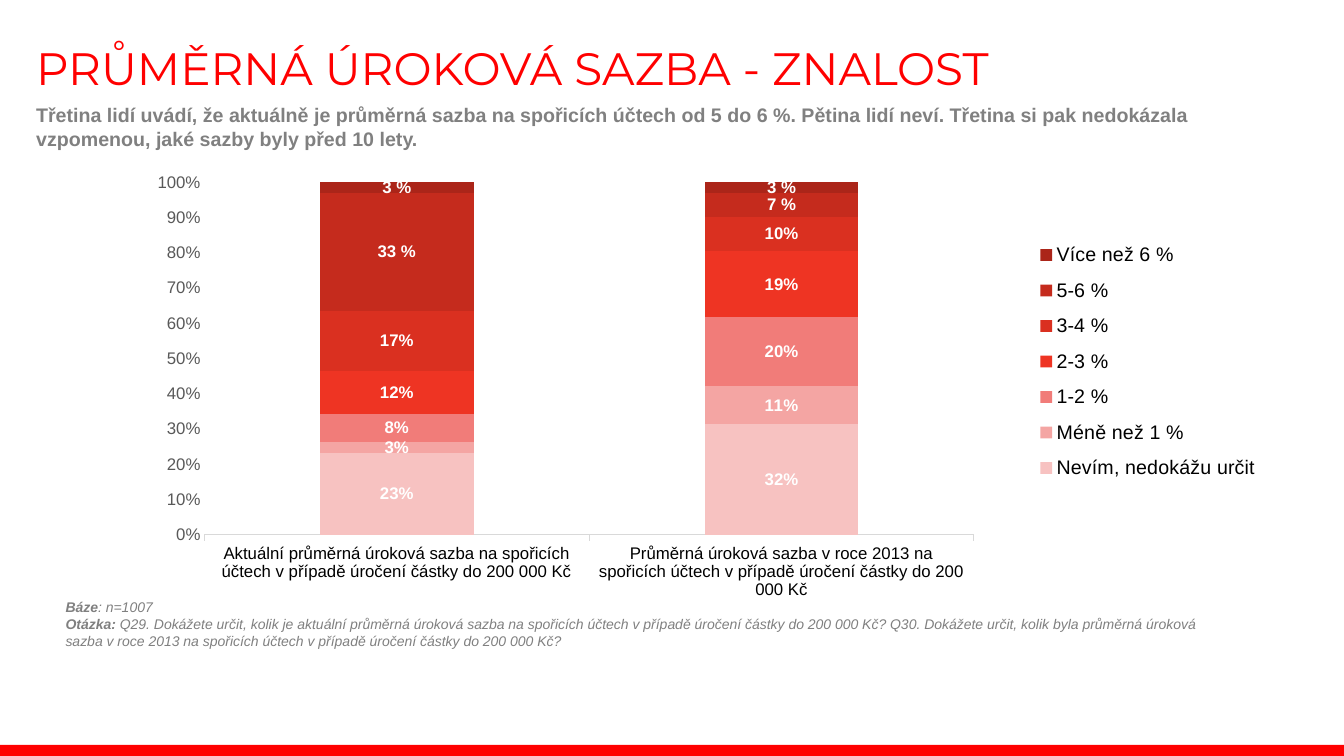
from lxml import etree
from pptx import Presentation
from pptx import util as u
from pptx.chart.data import CategoryChartData
from pptx.dml.color import RGBColor
from pptx.enum import chart as ch
from pptx.enum import shapes, text
from pptx.oxml.ns import qn

WIDTH, HEIGHT = 13.33, 7.5
RED = RGBColor(0xFF, 0x00, 0x00)
GREY = RGBColor(0x80, 0x80, 0x80)
AXIS_GREY = RGBColor(0x59, 0x59, 0x59)
LINE_GREY = RGBColor(0xD9, 0xD9, 0xD9)
BLACK = RGBColor(0x00, 0x00, 0x00)
WHITE = RGBColor(0xFF, 0xFF, 0xFF)

CATEGORIES = [
    "Aktuální průměrná úroková sazba na spořicích účtech v případě úročení částky do 200 000 Kč",
    "Průměrná úroková sazba v roce 2013 na spořicích účtech v případě úročení částky do 200 000 Kč",
]
TIGHT = '#,##0"%";\\-#,##0'
SPACED = '#,##0" %";\\-#,##0'
RATES = [
    ("Nevím, nedokážu určit", (23, 32), RGBColor(0xF7, 0xC2, 0xC1), TIGHT),
    ("Méně než 1 %", (3, 11), RGBColor(0xF4, 0xA5, 0xA3), TIGHT),
    ("1-2 %", (8, 20), RGBColor(0xF1, 0x7C, 0x79), TIGHT),
    ("2-3 %", (12, 19), RGBColor(0xEE, 0x34, 0x23), TIGHT),
    ("3-4 %", (17, 10), RGBColor(0xDA, 0x30, 0x20), TIGHT),
    ("5-6 %", (33, 7), RGBColor(0xC5, 0x2B, 0x1D), SPACED),
    ("Více než 6 %", (3, 3), RGBColor(0xAB, 0x25, 0x19), SPACED),
]
SUBTITLE = ("Třetina lidí uvádí, že aktuálně je průměrná sazba na spořicích účtech od 5 do 6 %. "
            "Pětina lidí neví. Třetina si pak nedokázala vzpomenou, jaké sazby byly před 10 lety.")
QUESTION = ("Q29. Dokážete určit, kolik je aktuální průměrná úroková sazba na spořicích účtech "
            "v případě úročení částky do 200 000 Kč? Q30. Dokážete určit, kolik byla průměrná "
            "úroková sazba v roce 2013 na spořicích účtech v případě úročení částky do 200 000 Kč?")


def inches(box):
    return [u.Inches(length) for length in box]


def style_font(font, size, color, name="Arial", bold=False, italic=False):
    font.name, font.size, font.bold, font.italic = name, u.Pt(size), bold, italic
    font.color.rgb = color


def add_text(page, box, paragraphs, size, color, name="Arial", italic=False,
             margins=(0.1, 0.05), anchor=text.MSO_ANCHOR.TOP, spacing=None):
    frame = page.shapes.add_textbox(*inches(box)).text_frame
    frame.word_wrap = True
    frame.vertical_anchor = anchor
    frame.margin_left = frame.margin_right = u.Inches(margins[0])
    frame.margin_top = frame.margin_bottom = u.Inches(margins[1])
    for index, spans in enumerate(paragraphs):
        para = frame.add_paragraph() if index else frame.paragraphs[0]
        para.line_spacing = spacing
        for wording, bold in spans:
            span = para.add_run()
            span.text = wording
            style_font(span.font, size, color, name, bold, italic)


def add_heading(page, box):
    left, top, width, height = box
    title_height = 0.43 * height
    add_text(page, (left, top, width, title_height),
             [[("PRŮMĚRNÁ ÚROKOVÁ SAZBA - ZNALOST", False)]], 32.4, RED, "Montserrat",
             anchor=text.MSO_ANCHOR.MIDDLE, spacing=0.9)
    add_text(page, (left, top + title_height, width, height - title_height),
             [[(SUBTITLE, True)]], 14, GREY)


def set_layout(parent, after, shares, inner=False):
    for stale in parent.findall(qn("c:layout")):
        parent.remove(stale)
    layout = etree.Element(qn("c:layout"))
    manual = etree.SubElement(layout, qn("c:manualLayout"))
    settings = [("layoutTarget", "inner")] if inner else []
    settings += [("xMode", "edge"), ("yMode", "edge")] + list(zip("xywh", shares))
    for tag, value in settings:
        etree.SubElement(manual, qn("c:" + tag)).set("val", str(value))
    if after is None:
        parent.insert(0, layout)
    else:
        after.addnext(layout)


def style_axes(chart):
    values, categories = chart.value_axis, chart.category_axis
    values.has_major_gridlines = False
    values.minimum_scale, values.maximum_scale, values.major_unit = 0, 1, 0.1
    values.major_tick_mark = ch.XL_TICK_MARK.NONE
    values.tick_labels.number_format = "0%"
    values.tick_labels.number_format_is_linked = False
    values.format.line.fill.background()
    style_font(values.tick_labels.font, 12, AXIS_GREY)
    categories.major_tick_mark = ch.XL_TICK_MARK.OUTSIDE
    categories.format.line.color.rgb = LINE_GREY
    categories.format.line.width = u.Pt(0.75)
    style_font(categories.tick_labels.font, 12, BLACK)


def add_rate_chart(page, box):
    data = CategoryChartData()
    data.categories = CATEGORIES
    for name, shares, _, _ in RATES:
        data.add_series(name, shares)
    chart = page.shapes.add_chart(ch.XL_CHART_TYPE.COLUMN_STACKED_100, *inches(box), data).chart
    chart.has_title = False
    style_font(chart.font, 10, BLACK)
    style_axes(chart)

    plot = chart.plots[0]
    plot.gap_width, plot.overlap, plot.vary_by_categories = 150, 100, False
    for series, (_, _, color, number_format) in zip(plot.series, RATES):
        series.format.fill.solid()
        series.format.fill.fore_color.rgb = color
        labels = series.data_labels
        labels.show_value = True
        labels.position = ch.XL_LABEL_POSITION.CENTER
        labels.number_format = number_format
        labels.number_format_is_linked = False
        style_font(labels.font, 12, WHITE, bold=True)

    chart.has_legend = True
    legend = chart.legend
    legend.position = ch.XL_LEGEND_POSITION.RIGHT
    legend.include_in_layout = False
    style_font(legend.font, 14, BLACK)
    area = chart.element.find(".//" + qn("c:plotArea"))
    key = chart.element.find(".//" + qn("c:legend"))
    set_layout(area, None, (0.062, 0.035, 0.659, 0.767), inner=True)
    set_layout(key, key.find(qn("c:legendPos")), (0.77, 0.14, 0.2, 0.57))


def add_footnote(page, box):
    add_text(page, box, [[("Báze", True), (": n=1007", False)],
                         [("Otázka: ", True), (QUESTION, False)]],
             10, GREY, italic=True, margins=(0, 0))


def add_bottom_band(page, box):
    band = page.shapes.add_shape(shapes.MSO_SHAPE.RECTANGLE, *inches(box))
    band.shadow.inherit = False
    band.fill.solid()
    band.fill.fore_color.rgb = RED
    band.line.fill.background()


def main():
    deck = Presentation()
    deck.slide_width, deck.slide_height = inches((WIDTH, HEIGHT))
    page = deck.slides.add_slide(deck.slide_layouts[6])
    band_height = 0.11
    add_bottom_band(page, (0, HEIGHT - band_height, WIDTH, band_height))
    add_heading(page, (0.26, 0.44, 12.69, 1.24))
    add_footnote(page, (0.65, 5.94, 11.58, 0.5))
    add_rate_chart(page, (1.31, 1.65, 11.58, 4.56))
    deck.save("out.pptx")


if __name__ == "__main__":
    main()
